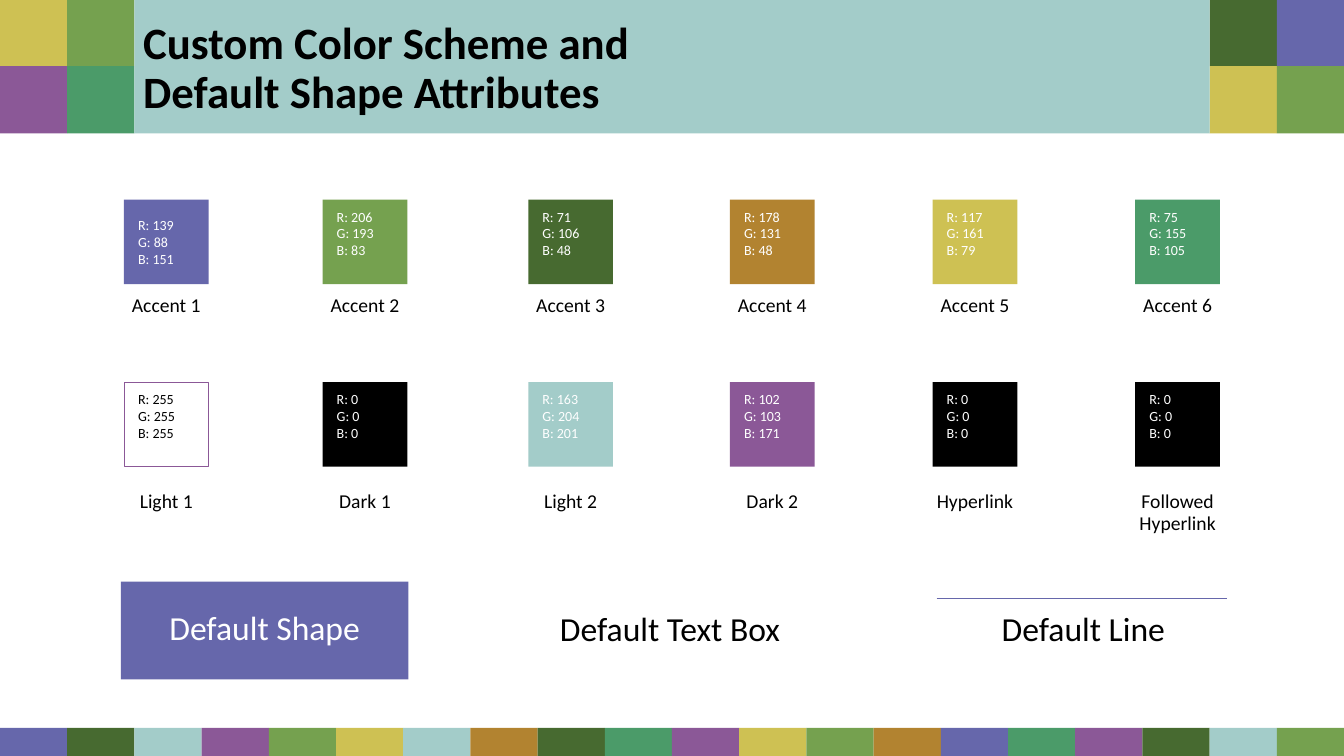
"""Build a slide that shows a custom colour scheme and default shape attributes."""
import pptx
import pptx.dml.color
import pptx.enum.shapes
import pptx.enum.text
import pptx.oxml.ns
import pptx.util
from lxml import etree

RGBColor = pptx.dml.color.RGBColor
ALIGN = pptx.enum.text.PP_ALIGN
ANCHOR = pptx.enum.text.MSO_ANCHOR

WHITE = RGBColor(0xFF, 0xFF, 0xFF)
BLACK = RGBColor(0x00, 0x00, 0x00)
BLUE = RGBColor(0x66, 0x67, 0xAB)
LEAF = RGBColor(0x75, 0xA1, 0x4F)
FOREST = RGBColor(0x47, 0x6A, 0x30)
OCHRE = RGBColor(0xB2, 0x83, 0x30)
YELLOW = RGBColor(0xCE, 0xC1, 0x53)
JADE = RGBColor(0x4B, 0x9B, 0x69)
MIST = RGBColor(0xA3, 0xCC, 0xC9)
PURPLE = RGBColor(0x8B, 0x58, 0x97)

TITLE = ("Custom Color Scheme and", "Default Shape Attributes")
FOOTER = (
    BLUE, FOREST, MIST, PURPLE, LEAF, YELLOW, MIST, OCHRE, FOREST, JADE,
    PURPLE, YELLOW, LEAF, OCHRE, BLUE, JADE, PURPLE, FOREST, MIST, LEAF,
)
CORNERS = (
    (0, ((YELLOW, LEAF), (PURPLE, JADE))),
    (18, ((FOREST, BLUE), (YELLOW, LEAF))),
)
SWATCH_ROWS = (
    (1.98, 2.93, (
        ("Accent 1", BLUE, (139, 88, 151)),
        ("Accent 2", LEAF, (206, 193, 83)),
        ("Accent 3", FOREST, (71, 106, 48)),
        ("Accent 4", OCHRE, (178, 131, 48)),
        ("Accent 5", YELLOW, (117, 161, 79)),
        ("Accent 6", JADE, (75, 155, 105)),
    )),
    (3.79, 4.88, (
        ("Light 1", WHITE, (255, 255, 255)),
        ("Dark 1", BLACK, (0, 0, 0)),
        ("Light 2", MIST, (163, 204, 201)),
        ("Dark 2", PURPLE, (102, 103, 171)),
        ("Hyperlink", BLACK, (0, 0, 0)),
        ("Followed Hyperlink", BLACK, (0, 0, 0)),
    )),
)
DEFAULTS = (
    ("Default Shape", (1.2, 5.77, 2.85, 0.97), BLUE, WHITE),
    ("Default Text Box", (5.22, 5.94, 2.85, 0.64), None, BLACK),
    ("Default Line", (9.32, 6.11, 2.85, 0.31), None, BLACK),
)

WIDTH, HEIGHT = 13.33, 7.5
TILE = WIDTH / 20
BAND_TOP = -0.01
FOOTER_HEIGHT = 0.28
COLUMNS = (1.23, 3.2, 5.24, 7.24, 9.25, 11.26)
SWATCH = 0.84
LABEL_WIDTH, LABEL_HEIGHT = 0.98, 0.45

TITLE_FORMAT = {"size": pptx.util.Pt(32), "bold": True}
CODE_FORMAT = {"size": pptx.util.Pt(10)}
LABEL_FORMAT = {"size": pptx.util.Pt(14)}
DEFAULT_FORMAT = {"size": pptx.util.Pt(24)}


def set_all(target, values):
    for name, value in values.items():
        setattr(target, name, value)


def add_box(page, place, fill=None, line=None):
    lengths = [pptx.util.Inches(length) for length in place]
    if fill is None:
        return page.shapes.add_textbox(*lengths)
    box = page.shapes.add_shape(pptx.enum.shapes.MSO_SHAPE.RECTANGLE, *lengths)
    box.shadow.inherit = False
    box.fill.solid()
    box.fill.fore_color.rgb = fill
    if line is None:
        box.line.fill.background()
    else:
        box.line.color.rgb = line
        box.line.width = pptx.util.Pt(0.5)
    return box


def write(box, paragraphs, font, color, anchor, insets=(0, 0, 0, 0), align=ALIGN.LEFT, spacing=1.0):
    frame = box.text_frame
    sides = ("margin_left", "margin_top", "margin_right", "margin_bottom")
    margins = {side: pptx.util.Inches(inset) for side, inset in zip(sides, insets)}
    set_all(frame, {"word_wrap": True, "vertical_anchor": anchor, **margins})
    for index, lines in enumerate(paragraphs):
        para = frame.add_paragraph() if index else frame.paragraphs[0]
        set_all(para, {"alignment": align, "line_spacing": spacing})
        for number, line in enumerate(lines):
            if number:
                para.add_line_break()
            span = para.add_run()
            span.text = line
            set_all(span.font, {"name": "Calibri", **font})
            span.font.color.rgb = color


def add_frame(page):
    for column, color in enumerate(FOOTER):
        add_box(page, (column * TILE, HEIGHT - FOOTER_HEIGHT, TILE, FOOTER_HEIGHT), color)
    for first, rows in CORNERS:
        for row, colors in enumerate(rows):
            for column, color in enumerate(colors, first):
                add_box(page, (column * TILE, BAND_TOP + row * TILE, TILE, TILE), color)
    add_box(page, (2 * TILE, BAND_TOP, 16 * TILE, 2 * TILE), MIST)
    title = add_box(page, (1.42, 0.17, 10.5, 1))
    write(title, [TITLE], TITLE_FORMAT, BLACK, ANCHOR.BOTTOM, spacing=0.9)


def add_swatches(page):
    for top, label_top, swatches in SWATCH_ROWS:
        for left, (name, fill, values) in zip(COLUMNS, swatches):
            light = fill == WHITE
            box = add_box(page, (left, top, SWATCH, SWATCH), fill, PURPLE if light else None)
            codes = [(f"{channel}: {value}",) for channel, value in zip("RGB", values)]
            bottom = 0.07 if name == "Accent 1" else 0.24
            write(box, codes, CODE_FORMAT, BLACK if light else WHITE, ANCHOR.MIDDLE,
                  (0.14, 0.07, 0.14, bottom))
            label_left = left - (LABEL_WIDTH - SWATCH) / 2
            label = add_box(page, (label_left, label_top, LABEL_WIDTH, LABEL_HEIGHT))
            write(label, [(name,)], LABEL_FORMAT, BLACK, ANCHOR.TOP, align=ALIGN.CENTER, spacing=0.9)


def add_defaults(page):
    for name, place, fill, color in DEFAULTS:
        box = add_box(page, place, fill)
        write(box, [(name,)], DEFAULT_FORMAT, color, ANCHOR.MIDDLE, (0.1, 0, 0.1, 0),
              ALIGN.CENTER, 0.85)
    ends = [pptx.util.Inches(length) for length in (9.29, 5.94, 12.17, 5.94)]
    rule = page.shapes.add_connector(pptx.enum.shapes.MSO_CONNECTOR.STRAIGHT, *ends)
    rule.line.color.rgb = BLUE
    rule.line.width = pptx.util.Pt(1)
    etree.SubElement(rule._element.spPr, pptx.oxml.ns.qn("a:effectLst"))


def main():
    deck = pptx.Presentation()
    deck.slide_width = pptx.util.Inches(WIDTH)
    deck.slide_height = pptx.util.Inches(HEIGHT)
    page = deck.slides.add_slide(deck.slide_layouts[6])
    add_frame(page)
    add_swatches(page)
    add_defaults(page)
    deck.save("out.pptx")


if __name__ == "__main__":
    main()
